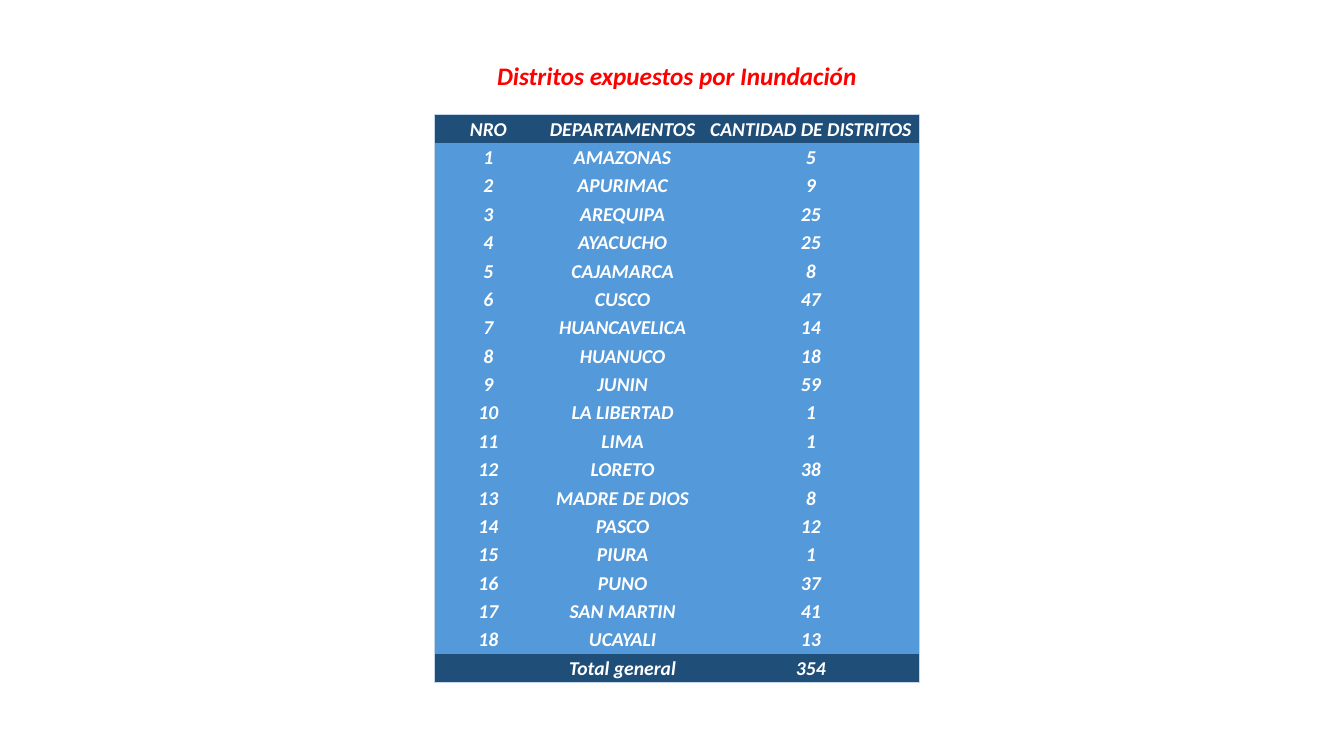
"""Builds the slide that counts the districts exposed to flooding per department."""
from lxml.etree import SubElement
from pptx import Presentation
from pptx.dml.color import RGBColor
from pptx.enum.text import MSO_ANCHOR as Anchor, MSO_AUTO_SIZE as AutoSize, PP_ALIGN as Align
from pptx.oxml.ns import qn
from pptx.util import Pt

RED = RGBColor(0xFF, 0x00, 0x00)
WHITE = RGBColor(0xFF, 0xFF, 0xFF)
NAVY = RGBColor(0x1F, 0x4E, 0x79)
BLUE = RGBColor(0x54, 0x99, 0xDA)
PALE_BLUE = RGBColor(0xC4, 0xD5, 0xEB)

HEADINGS = ("NRO", "DEPARTAMENTOS", "CANTIDAD DE DISTRITOS")
TOTAL = ("", "Total general", "354")
DISTRICTS = {
    "AMAZONAS": 5, "APURIMAC": 9, "AREQUIPA": 25, "AYACUCHO": 25, "CAJAMARCA": 8, "CUSCO": 47,
    "HUANCAVELICA": 14, "HUANUCO": 18, "JUNIN": 59, "LA LIBERTAD": 1, "LIMA": 1, "LORETO": 38,
    "MADRE DE DIOS": 8, "PASCO": 12, "PIURA": 1, "PUNO": 37, "SAN MARTIN": 41, "UCAYALI": 13,
}


class FloodSlide:
    """Holds the text style and the slide being filled."""

    font_name = "Calibri"
    cell_size = 14
    row_height = 20.27

    def __init__(self, slide):
        self.slide = slide

    def label(self, frame, text, size, color):
        frame.text = text
        paragraph = frame.paragraphs[0]
        paragraph.alignment = Align.CENTER
        for run in paragraph.runs:
            font = run.font
            font.name, font.size, font.bold, font.italic = self.font_name, Pt(size), True, True
            font.color.rgb = color
        if not text:
            SubElement(paragraph._p, qn("a:endParaRPr"), sz=str(size * 100))

    def title(self, text, left, top, width, height):
        heading = self.slide.shapes.add_textbox(Pt(left), Pt(top), Pt(width), Pt(height))
        frame = heading.text_frame
        frame.word_wrap = False
        frame.auto_size = AutoSize.SHAPE_TO_FIT_TEXT
        self.label(frame, text, 18, RED)

    def border(self, cell, side, visible):
        properties = cell._tc.get_or_add_tcPr()
        edge = SubElement(properties, qn(f"a:ln{side}"), w=str(Pt(0.5)))
        if visible:
            fill = SubElement(edge, qn("a:solidFill"))
            SubElement(fill, qn("a:srgbClr"), val=str(PALE_BLUE))
        else:
            SubElement(edge, qn("a:noFill"))

    def cell(self, cell, text, fill, outer_sides):
        cell.margin_left = cell.margin_right = cell.margin_top = Pt(0.7)
        cell.margin_bottom = Pt(0)
        cell.vertical_anchor = Anchor.MIDDLE
        for side in "LRTB":
            self.border(cell, side, side in outer_sides)
        cell.fill.solid()
        cell.fill.fore_color.rgb = fill
        self.label(cell.text_frame, text, self.cell_size, WHITE)

    def table(self, rows, left, top, widths):
        height = self.row_height * len(rows)
        grid = self.slide.shapes.add_table(
            len(rows), len(widths), Pt(left), Pt(top), Pt(sum(widths)), Pt(height)).table
        for column, width in zip(grid.columns, widths):
            column.width = Pt(width)
        last_row, last_column = len(rows) - 1, len(widths) - 1
        for r, texts in enumerate(rows):
            grid.rows[r].height = Pt(self.row_height)
            fill = NAVY if r in (0, last_row) else BLUE
            for c, text in enumerate(texts):
                at_edge = {"L": c == 0, "R": c == last_column, "T": r == 0, "B": r == last_row}
                outer_sides = [side for side, outer in at_edge.items() if outer]
                self.cell(grid.cell(r, c), text, fill, outer_sides)


def main():
    deck = Presentation()
    deck.slide_width, deck.slide_height = Pt(960), Pt(540)
    flood = FloodSlide(deck.slides.add_slide(deck.slide_layouts[6]))
    flood.title("Distritos expuestos por Inundación", 346.3, 39.6, 274.3, 29)
    departments = [(str(number), name, str(count))
                   for number, (name, count) in enumerate(DISTRICTS.items(), 1)]
    flood.table([HEADINGS, *departments, TOTAL], 310.4, 82, (77, 114.7, 154.3))
    deck.save("out.pptx")


if __name__ == "__main__":
    main()
